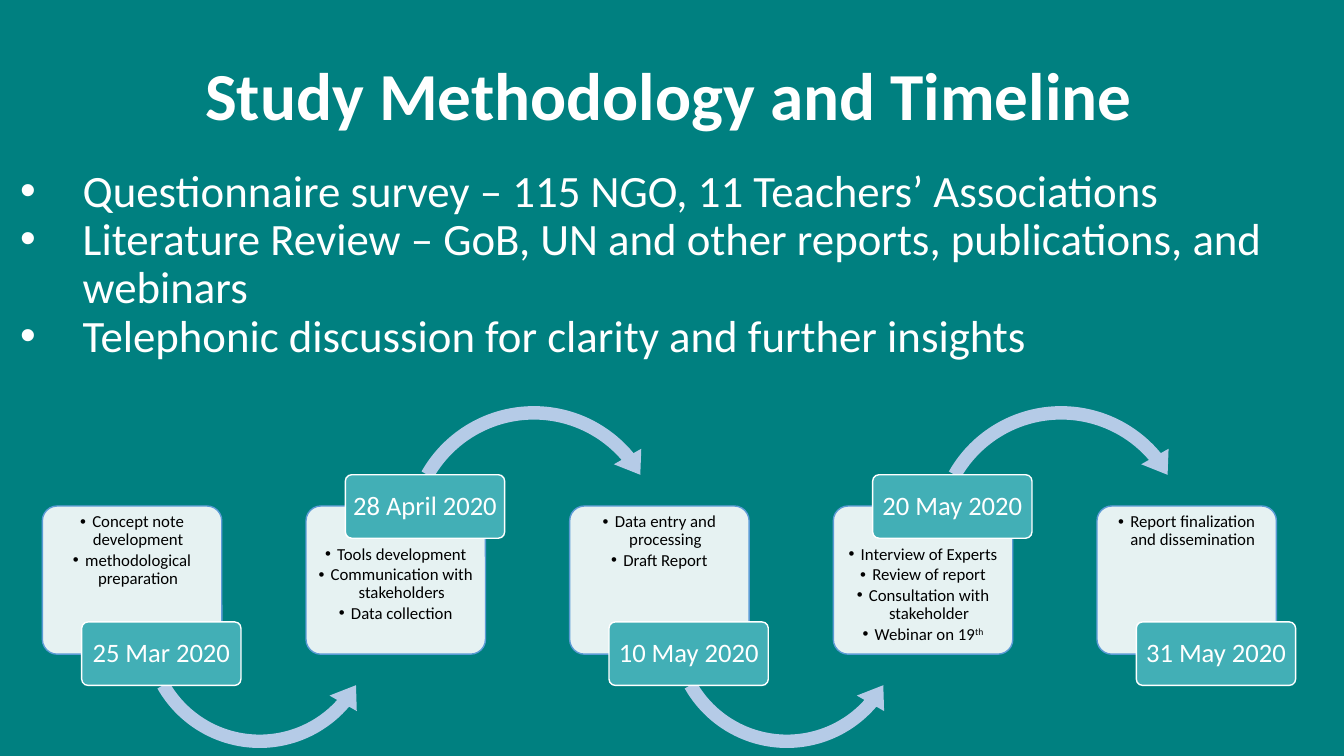
from lxml import etree
from pptx import Presentation
from pptx.dml.color import RGBColor
from pptx.enum.shapes import MSO_SHAPE
from pptx.enum.text import MSO_ANCHOR, MSO_AUTO_SIZE, PP_ALIGN
from pptx.oxml.ns import qn
from pptx.util import Inches, Pt

CENTER, LEFT = PP_ALIGN.CENTER, PP_ALIGN.LEFT
TOP, MIDDLE = MSO_ANCHOR.TOP, MSO_ANCHOR.MIDDLE
ROUNDED = MSO_SHAPE.ROUNDED_RECTANGLE
ARROW_OVER, ARROW_UNDER = MSO_SHAPE.CIRCULAR_ARROW, MSO_SHAPE.LEFT_CIRCULAR_ARROW

COLORS = {
    "background": "008080",
    "white": "FFFFFF",
    "black": "000000",
    "card_line": "5B9BD5",
    "date": "42AFB6",
    "arrow": "B5CBE7",
}

METHODS = [
    "Questionnaire survey – 115 NGO, 11 Teachers’ Associations",
    "Literature Review – GoB, UN and other reports, publications, and webinars",
    "Telephonic discussion for clarity and further insights",
]
STEPS = [
    ("25 Mar 2020", ["Concept note development", "methodological preparation"]),
    ("28 April 2020", ["Tools development", "Communication with stakeholders", "Data collection"]),
    ("10 May 2020", ["Data entry and processing", "Draft Report"]),
    ("20 May 2020", ["Interview of Experts", "Review of report",
                     "Consultation with stakeholder", "Webinar on 19^th"]),
    ("31 May 2020", ["Report finalization and dissemination"]),
]


def write(frame, lines, size, color="white", bold=False, align=LEFT, anchor=TOP,
          insets=(0.1, 0.05, 0.1, 0.05), spacing=0.9, after=0, hanging=0):
    """Fill a text frame, one paragraph a line; ^ starts a superscript, hanging adds bullets."""
    frame.word_wrap = True
    frame.auto_size = MSO_AUTO_SIZE.NONE
    frame.vertical_anchor = anchor
    frame.margin_left, frame.margin_top, frame.margin_right, frame.margin_bottom = map(Inches, insets)
    for number, line in enumerate(lines):
        para = frame.add_paragraph() if number else frame.paragraphs[0]
        para.alignment = align
        para.line_spacing = spacing
        para.space_before, para.space_after = Pt(0), Pt(after)
        if hanging:
            properties = para._p.get_or_add_pPr()
            properties.set("marL", str(Inches(hanging)))
            properties.set("indent", str(-Inches(hanging)))
            etree.SubElement(properties, qn("a:buFont")).set("typeface", "Arial")
            etree.SubElement(properties, qn("a:buChar")).set("char", "•")
        for part, text in enumerate(line.split("^")):
            span = para.add_run()
            span.text = text
            span.font.name = "Calibri"
            span.font.size = Pt(size)
            span.font.bold = bold
            span.font.color.rgb = RGBColor.from_string(COLORS[color])
            if part:
                span._r.get_or_add_rPr().set("baseline", "30000")


def add_box(kind, left, top, width, height, fill, line=None, adjustments=(0.1,)):
    box = page.shapes.add_shape(kind, Inches(left), Inches(top), Inches(width), Inches(height))
    box.shadow.inherit = False
    box.fill.solid()
    box.fill.fore_color.rgb = RGBColor.from_string(COLORS[fill])
    if line:
        box.line.color.rgb = RGBColor.from_string(COLORS[line])
        box.line.width = Pt(1)
    else:
        box.line.fill.background()
    for number, value in enumerate(adjustments):
        box.adjustments[number] = value
    return box


deck = Presentation()
deck.slide_width, deck.slide_height = Inches(13.33), Inches(7.5)
page = deck.slides.add_slide(deck.slide_layouts[1])
page.background.fill.solid()
page.background.fill.fore_color.rgb = RGBColor.from_string(COLORS["background"])

# Title and methods
title, body = page.placeholders
title.left, title.top, title.width, title.height = map(Inches, (1.28, 0.48, 10.71, 0.91))
write(title.text_frame, ["Study Methodology and Timeline"], 48, bold=True,
      align=CENTER, spacing=1.0)
body.left, body.top, body.width, body.height = map(Inches, (0.1, 1.62, 13.19, 2.65))
write(body.text_frame, METHODS, 32, hanging=0.62)

# Timeline: dates alternate between the bottom and the top of their cards
FIRST_LEFT, LAST_LEFT, CARD_TOP = 0.42, 10.88, 5.02
pitch = (LAST_LEFT - FIRST_LEFT) / (len(STEPS) - 1)

for index, (date, tasks) in enumerate(STEPS):
    left = FIRST_LEFT + index * pitch
    date_on_top = index % 2 == 1

    card = add_box(ROUNDED, left, CARD_TOP, 1.78, 1.47, "white", "card_line")
    color = card.fill._xPr.find(qn("a:solidFill"))[0]
    etree.SubElement(color, qn("a:alpha")).set("val", "90000")
    write(card.text_frame, tasks, 12, "black", align=CENTER, after=1.8, hanging=0.12,
          insets=(0.03, 0.35 if date_on_top else 0.03, 0.03, 0.03))

    if index < len(STEPS) - 1:
        if date_on_top:
            add_box(ARROW_OVER, left + 0.89, 3.94, 2.74, 2.74, "arrow",
                    adjustments=(0.049, 6.26, 191.985, 125.755, 0.057))
        else:
            add_box(ARROW_UNDER, left + 0.9, 5, 2.51, 2.51, "arrow",
                    adjustments=(0.053, 6.903, 24.658, 90.245, 0.062))

    label = add_box(ROUNDED, left + 0.39, 4.71 if date_on_top else 6.17, 1.58, 0.63,
                    "date", "white")
    write(label.text_frame, [date], 19, align=CENTER, anchor=MIDDLE,
          insets=(0.04, 0.03, 0.04, 0.03))

deck.save("out.pptx")
